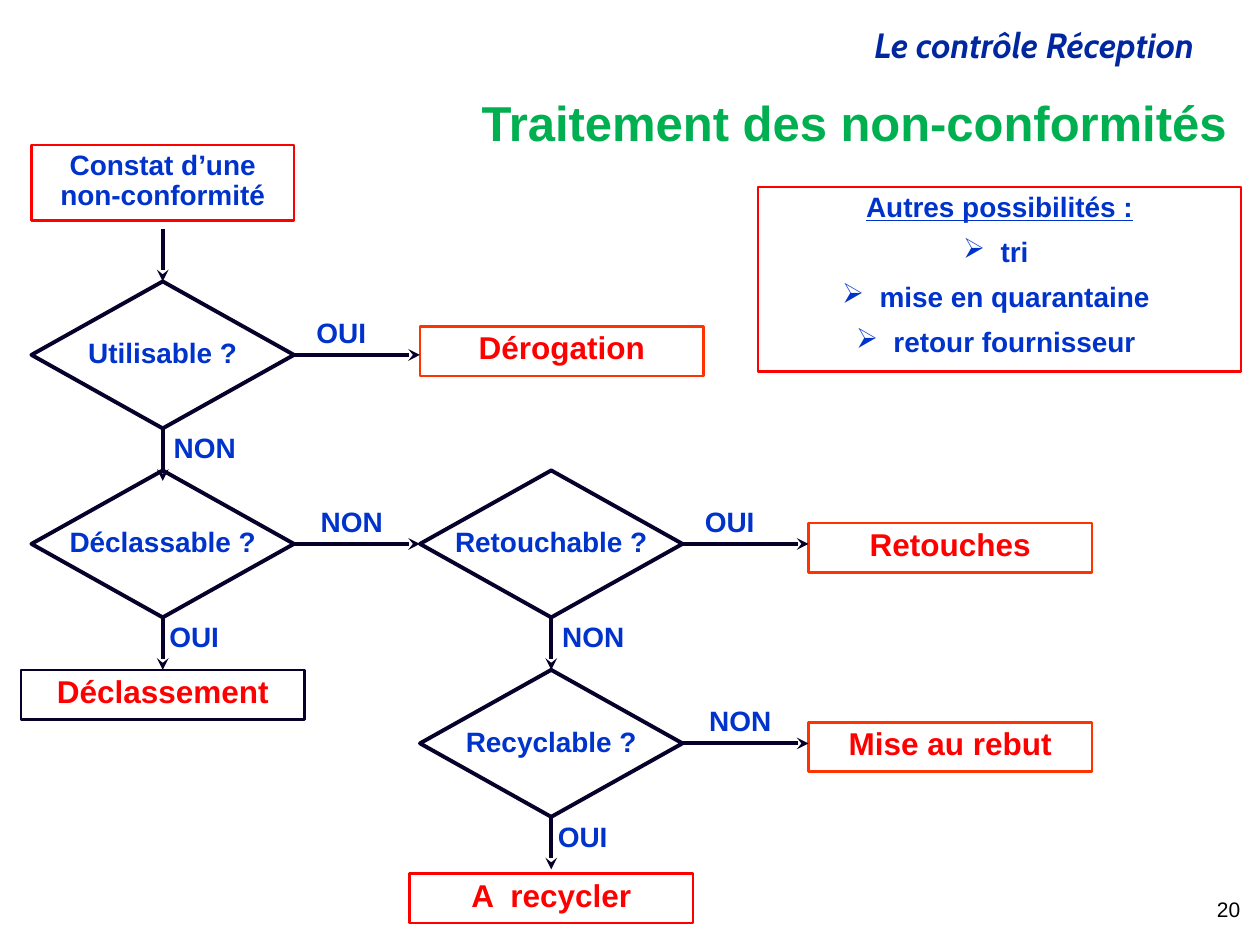
"""Build the flowchart slide on the treatment of non-conforming goods."""
from lxml.etree import SubElement
from pptx import Presentation
from pptx.dml.color import RGBColor
from pptx.enum.shapes import MSO_CONNECTOR, MSO_SHAPE
from pptx.enum.text import MSO_ANCHOR, PP_ALIGN
from pptx.oxml.ns import qn
from pptx.util import Inches, Pt

COLORS = {
    "ink": "07002A", "blue": "0033CC", "navy": "00279F", "red": "FF0000",
    "orange": "FF3300", "green": "00B050", "black": "000000",
}

presentation = Presentation()
presentation.slide_width = Inches(10)
presentation.slide_height = Inches(7.5)
slide = presentation.slides.add_slide(presentation.slide_layouts[6])
column = presentation.slide_width / 120
row = presentation.slide_height / 90


def add_text(cell, text, size, color, outline=None, align=PP_ALIGN.CENTER,
             spacing=0.9, bold=True, font="Arial", anchor=MSO_ANCHOR.TOP):
    """Write text in a grid cell, inside a rectangle when outline is given."""
    left, top, width, height = cell
    area = (round(left * column), round(top * row),
            round(width * column), round(height * row))
    if outline:
        shape = slide.shapes.add_shape(MSO_SHAPE.RECTANGLE, *area)
        shape.shadow.inherit = False
        shape.fill.background()
        shape.line.color.rgb = RGBColor.from_string(COLORS[outline])
        shape.line.width = Pt(1.5)
    else:
        shape = slide.shapes.add_textbox(*area)
    text_frame = shape.text_frame
    text_frame.word_wrap = True
    text_frame.vertical_anchor = anchor
    text_frame.text = text
    for paragraph in text_frame.paragraphs:
        paragraph.alignment = align
        paragraph.line_spacing = spacing
        for run in paragraph.runs:
            run.font.name = font
            run.font.size = Pt(size)
            run.font.bold = bold
            run.font.color.rgb = RGBColor.from_string(COLORS[color])
    return shape


def add_arrow(start, end, source=None, target=None):
    """Draw an arrow between grid points, joined to the shapes given."""
    connector = slide.shapes.add_connector(
        MSO_CONNECTOR.STRAIGHT, round(start[0] * column), round(start[1] * row),
        round(end[0] * column), round(end[1] * row))
    vertical = start[0] == end[0]
    if source:
        connector.begin_connect(source, 2 if vertical else 3)
    if target:
        connector.end_connect(target, 0 if vertical else 1)
    connector.line.color.rgb = RGBColor.from_string(COLORS["ink"])
    connector.line.width = Pt(2.25)
    SubElement(connector.line._get_or_add_ln(), qn("a:tailEnd"), type="stealth")
    SubElement(connector._element.spPr, qn("a:effectLst"))


header = add_text((43.9, 1.6, 71, 5.2), "Le contrôle Réception", 20, "navy",
                  align=PP_ALIGN.RIGHT, spacing=1, font="Cabin")
header.text_frame.paragraphs[0].runs[0].font.italic = True
add_text((23, 9, 95, 6), "Traitement des non-conformités", 28, "green",
         align=PP_ALIGN.RIGHT, anchor=MSO_ANCHOR.MIDDLE)
add_text((92.3, 84.2, 27, 4.8), "20", 12, "black", align=PP_ALIGN.RIGHT,
         spacing=1, bold=False, anchor=MSO_ANCHOR.MIDDLE)
add_text((3, 13.8, 25, 7.2), "Constat d’une non-conformité", 16, "blue", "red")

possibilities = add_text(
    (72.2, 17.8, 46, 17.6),
    "Autres possibilités :\n tri\n mise en quarantaine\n retour fournisseur",
    16, "blue", "red")
heading, *options = possibilities.text_frame.paragraphs
heading.runs[0].font.underline = True
for paragraph in options:
    paragraph.space_before = Pt(8.6)
    SubElement(paragraph._p.get_or_add_pPr(), qn("a:buChar"), char="➢")

nodes = {}
for name, left, top in [
    ("Utilisable ?", 3, 26.8), ("Déclassable ?", 3, 44.8),
    ("Retouchable ?", 40, 44.8), ("Recyclable ?", 40, 63.8),
]:
    diamond = slide.shapes.add_shape(
        MSO_SHAPE.FLOWCHART_DECISION, round(left * column), round(top * row),
        round(25 * column), round(14 * row))
    diamond.shadow.inherit = False
    diamond.fill.background()
    diamond.line.color.rgb = RGBColor.from_string(COLORS["ink"])
    diamond.line.width = Pt(2.25)
    nodes[name] = diamond
    add_text((left + 0.5, top + 4.6, 24, 4.4), name, 16, "blue", spacing=1)

for name, left, top, outline in [
    ("Dérogation", 40, 31.1, "orange"), ("Retouches", 77, 49.8, "orange"),
    ("Mise au rebut", 77, 68.8, "orange"), ("Déclassement", 2, 63.8, "ink"),
    ("A  recycler", 39, 83.2, "red"),
]:
    nodes[name] = add_text((left, top, 27, 4.7), name, 18, "red", outline)

for start, end, source, target in [
    ((15.5, 21.8), (15.5, 26.8), None, "Utilisable ?"),
    ((28, 33.8), (40, 33.8), "Utilisable ?", None),
    ((15.5, 40.8), (15.5, 45.8), "Utilisable ?", None),
    ((28, 51.8), (40, 51.8), "Déclassable ?", "Retouchable ?"),
    ((15.5, 58.8), (15.5, 63.8), "Déclassable ?", "Déclassement"),
    ((65, 51.8), (77, 51.8), "Retouchable ?", None),
    ((52.5, 58.8), (52.5, 63.8), "Retouchable ?", "Recyclable ?"),
    ((65, 70.8), (77, 70.8), "Recyclable ?", None),
    ((52.5, 77.8), (52.5, 82.8), "Recyclable ?", None),
]:
    add_arrow(start, end, nodes.get(source), nodes.get(target))

for answer, left, top in [
    ("OUI", 28, 29.8), ("NON", 15, 40.8), ("NON", 29, 47.8),
    ("OUI", 14, 58.8), ("OUI", 65, 47.8), ("NON", 52, 58.8),
    ("NON", 66, 66.8), ("OUI", 51, 77.8),
]:
    add_text((left, top, 9, 4.1), answer, 16, "blue")

presentation.save("out.pptx")
